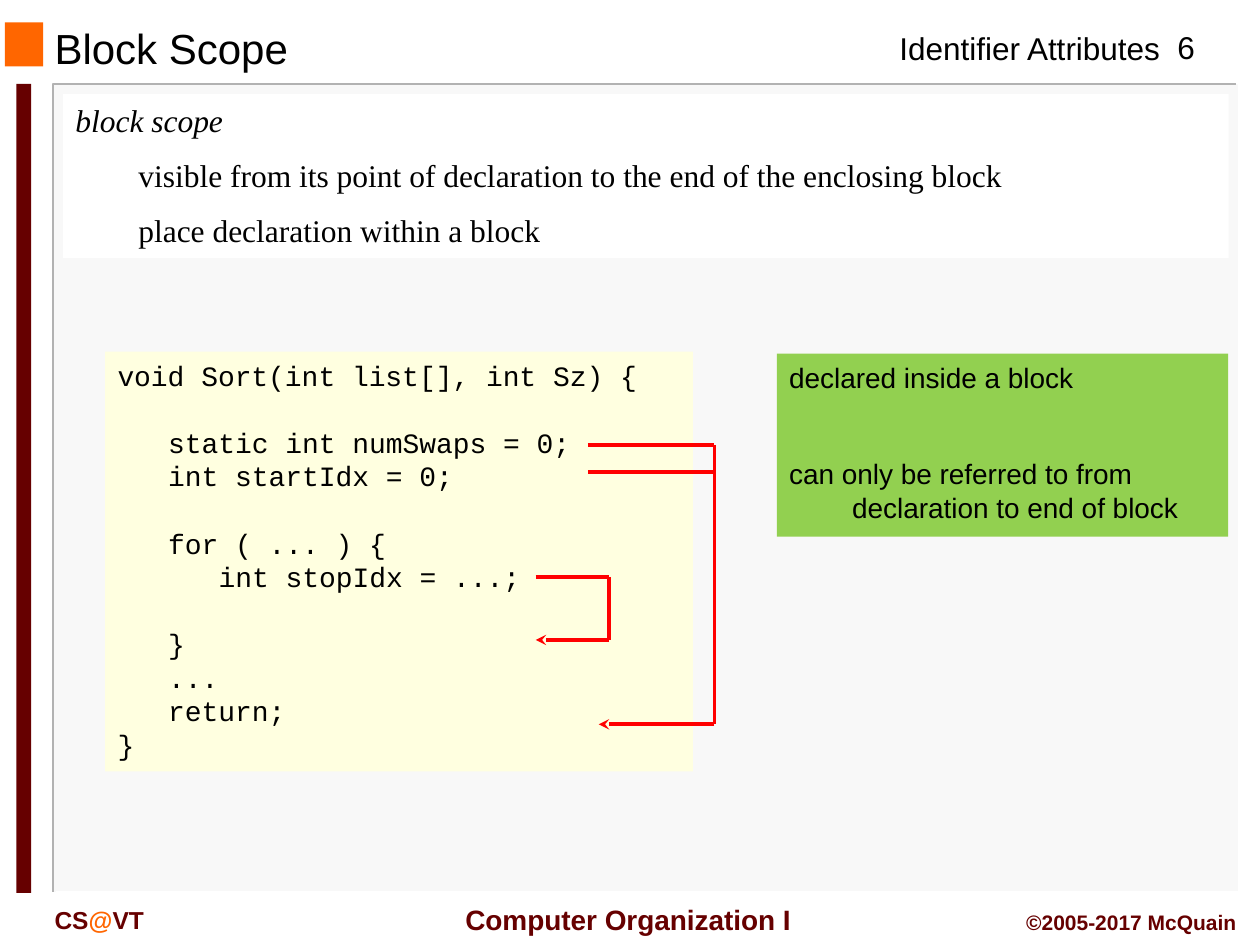
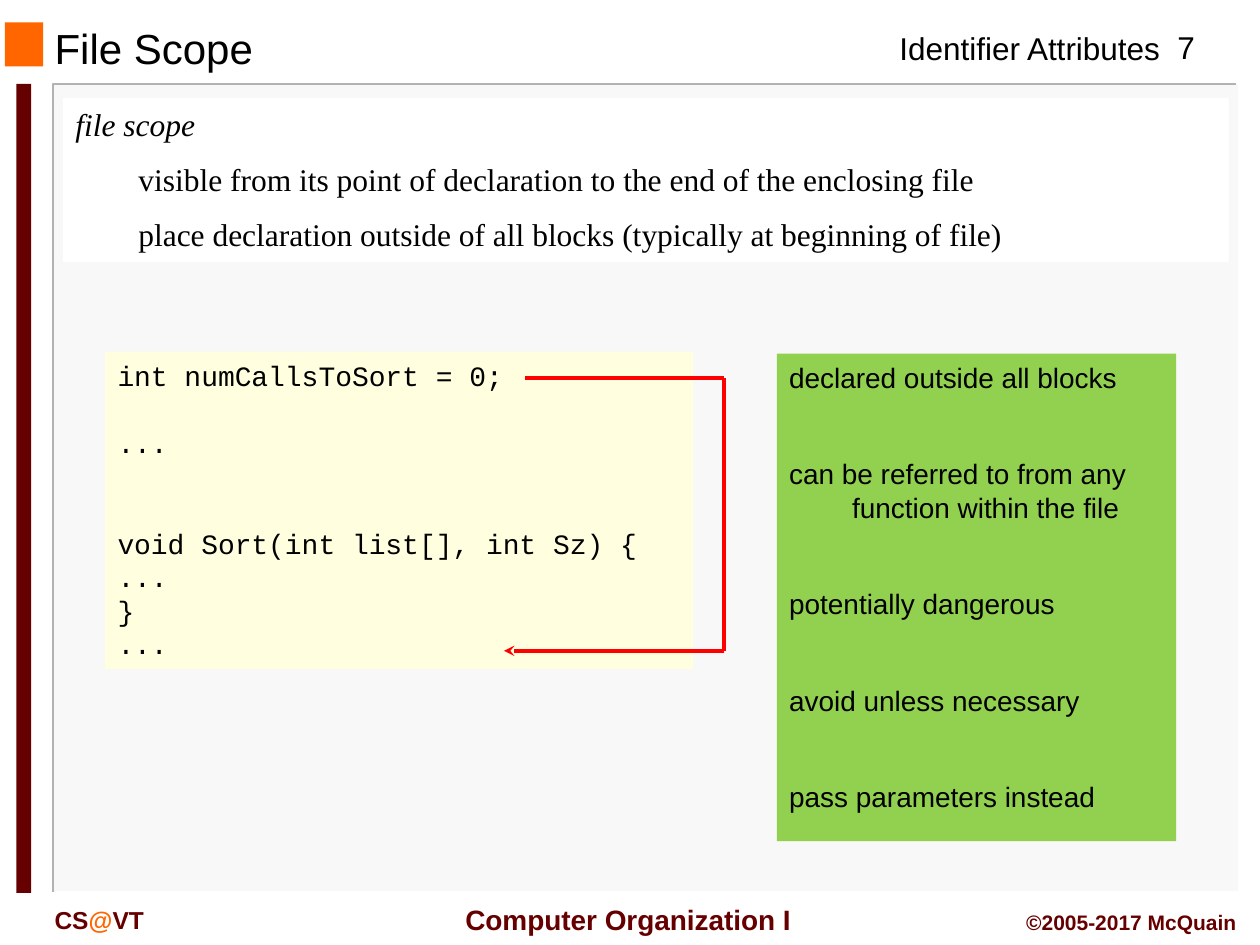
from lxml import etree
from pptx import Presentation
from pptx.dml.color import RGBColor
from pptx.enum import shapes, text
from pptx.oxml import ns
from pptx.util import Cm, Pt

BLACK = RGBColor(0x00, 0x00, 0x00)
WHITE = RGBColor(0xFF, 0xFF, 0xFF)
PANEL_GREY = RGBColor(0xF8, 0xF8, 0xF8)
EDGE_GREY = RGBColor(0xB2, 0xB2, 0xB2)
ORANGE = RGBColor(0xFF, 0x66, 0x00)
MAROON = RGBColor(0x66, 0x00, 0x00)
CODE_YELLOW = RGBColor(0xFF, 0xFF, 0xE0)
NOTE_GREEN = RGBColor(0x92, 0xD0, 0x50)
RED = RGBColor(0xFF, 0x00, 0x00)

SANS, SERIF, MONO = "Arial", "Times New Roman", "Courier New"
HANG = Cm(1.27)
CODE_STEP = Cm(1.02)   # three characters of code
CODE_LINE = 19.2       # line pitch of code in points
LEFT, CENTER, RIGHT = (text.PP_ALIGN.LEFT, text.PP_ALIGN.CENTER,
                       text.PP_ALIGN.RIGHT)


def add_run(p, words, font, size, color=BLACK, bold=False, italic=False):
    r = p.add_run()
    r.text = words
    r.font.name = font
    r.font.size = Pt(size)
    r.font.color.rgb = color
    r.font.bold = bold
    r.font.italic = italic


def set_indent(p, margin, first=0):
    pPr = p._p.get_or_add_pPr()
    pPr.set("marL", str(int(margin)))
    pPr.set("indent", str(int(first)))


def set_frame(tf, anchor=text.MSO_ANCHOR.TOP, wrap=True):
    tf.auto_size = text.MSO_AUTO_SIZE.NONE
    tf.word_wrap = wrap
    tf.vertical_anchor = anchor
    tf.margin_left = tf.margin_right = Cm(0.25)
    tf.margin_top = tf.margin_bottom = Cm(0.13)


def add_block(slide, box, color):
    sp = slide.shapes.add_shape(shapes.MSO_SHAPE.RECTANGLE, *map(Cm, box))
    sp.shadow.inherit = False
    sp.fill.solid()
    sp.fill.fore_color.rgb = color
    sp.line.fill.background()
    set_frame(sp.text_frame)
    return sp.text_frame


def add_paragraphs(tf, count):
    """Return count left-aligned paragraphs, the first one included."""
    for _ in range(count - 1):
        tf.add_paragraph()
    for p in tf.paragraphs:
        p.alignment = LEFT
    return tf.paragraphs


def add_label(slide, box, runs, size, align=LEFT, bold=False, wrap=True):
    tf = slide.shapes.add_textbox(*map(Cm, box)).text_frame
    set_frame(tf, wrap=wrap)
    p = tf.paragraphs[0]
    p.alignment = align
    for words, color in runs:
        add_run(p, words, SANS, size, color, bold)


def add_edge(slide, points, color):
    start, *rest = [(Cm(x), Cm(y)) for x, y in points]
    builder = slide.shapes.build_freeform(*start, scale=1.0)
    builder.add_line_segments(rest, close=False)
    sp = builder.convert_to_shape()
    sp.shadow.inherit = False
    sp.fill.background()
    sp.line.color.rgb = color
    sp.line.width = Pt(1)


def add_scope_line(slide, points, arrow=True):
    """Join the points with red lines; the last may end in an arrowhead."""
    for start, end in zip(points, points[1:]):
        line = slide.shapes.add_connector(
            shapes.MSO_CONNECTOR.STRAIGHT, *map(Cm, start + end))
        line.line.color.rgb = RED
        line.line.width = Pt(2)
        spPr = line._element.spPr
        if arrow and end == points[-1]:
            tail = etree.SubElement(spPr.find(ns.qn("a:ln")),
                                    ns.qn("a:tailEnd"))
            tail.set("type", "stealth")
        etree.SubElement(spPr, ns.qn("a:effectLst"))


def add_definition(slide, top, term, details):
    tf = add_block(slide, (1.27, top, 23.5, 3.3), WHITE)
    first, *rest = add_paragraphs(tf, 1 + len(details))
    add_run(first, term, SERIF, 18, italic=True)
    for p, words in zip(rest, details):
        set_indent(p, HANG)
        p.space_before = Pt(10)
        add_run(p, words, SERIF, 18)


def add_code(slide, height, lines):
    """Each line is (indent level, empty lines above, code)."""
    tf = add_block(slide, (2.12, 7.09, 11.85, height), CODE_YELLOW)
    for p, (level, gap, code) in zip(add_paragraphs(tf, len(lines)), lines):
        set_indent(p, level * CODE_STEP)
        p.line_spacing = Pt(CODE_LINE)
        p.space_before = Pt(gap * CODE_LINE)
        add_run(p, code, MONO, 16)


def add_notes_box(slide, width, height, notes):
    tf = add_block(slide, (15.66, 7.13, width, height), NOTE_GREEN)
    for i, p in enumerate(add_paragraphs(tf, len(notes))):
        set_indent(p, HANG, -HANG)
        p.space_before = Pt(36 if i else 0)
        add_run(p, notes[i], SANS, 16)


def add_scope_slide(prs, title, number):
    slide = prs.slides.add_slide(prs.slide_layouts[5])

    # Title
    sp = slide.shapes.title
    sp.left, sp.top, sp.width, sp.height = map(Cm, (0.85, 0.49, 16.09, 0.95))
    set_frame(sp.text_frame, text.MSO_ANCHOR.MIDDLE)
    p = sp.text_frame.paragraphs[0]
    p.alignment = LEFT
    add_run(p, title, SANS, 24)

    # Panel with its edges, orange square and maroon bar
    add_block(slide, (1.08, 1.7, 23.88, 16.28), PANEL_GREY)
    add_edge(slide, [(24.92, 1.7), (1.07, 1.7), (1.07, 17.98)], EDGE_GREY)
    add_edge(slide, [(24.97, 1.7), (24.97, 17.98), (1.12, 17.98)], WHITE)
    add_block(slide, (0.1, 0.45, 0.77, 0.89), ORANGE)
    add_block(slide, (0.33, 1.69, 0.3, 16.31), MAROON)

    # Header and footer
    add_label(slide, (17.88, 0.46, 5.82, 1.02),
              [("Identifier Attributes", BLACK)], 18, wrap=False)
    add_label(slide, (23.06, 0.43, 1.7, 1.02), [(str(number), BLACK)], 18,
              CENTER)
    add_label(slide, (8.97, 18.06, 7.39, 0.94),
              [("Computer Organization I", MAROON)], 16, CENTER, bold=True)
    add_label(slide, (0.85, 18.11, 3.81, 0.85),
              [("CS", MAROON), ("@", ORANGE), ("VT", MAROON)], 14, bold=True)
    add_label(slide, (19.9, 18.2, 5.28, 0.77),
              [("©2005-2017 McQuain", MAROON)], 12, RIGHT, bold=True)
    return slide


def build_block_scope(prs):
    slide = add_scope_slide(prs, "Block Scope", 6)
    add_definition(slide, 1.9, "block scope", [
        "visible from its point of declaration to the end of the enclosing block",
        "place declaration within a block"])
    add_code(slide, 8.46, [
        (0, 0, "void Sort(int list[], int Sz) {"),
        (1, 1, "static int numSwaps = 0;"),
        (1, 0, "int startIdx = 0;"),
        (1, 1, "for ( ... ) {"),
        (2, 0, "int stopIdx = ...;"),
        (1, 1, "}"),
        (1, 0, "..."),
        (1, 0, "return;"),
        (0, 0, "}")])
    add_notes_box(slide, 9.1, 3.69, [
        "declared inside a block",
        "can only be referred to from declaration to end of block"])

    # Function-level scope, then loop-level scope
    add_scope_line(slide, [(11.85, 8.97), (14.4, 8.97), (14.4, 14.6),
                           (12.07, 14.6)])
    add_scope_line(slide, [(11.85, 9.52), (14.4, 9.52)], arrow=False)
    add_scope_line(slide, [(10.8, 11.63), (12.28, 11.63), (12.28, 12.9),
                           (10.8, 12.9)])


def build_file_scope(prs):
    slide = add_scope_slide(prs, "File Scope", 7)
    add_code(slide, 6.4, [
        (0, 0, "int numCallsToSort = 0;"),
        (0, 1, "..."),
        (0, 2, "void Sort(int list[], int Sz) {"),
        (0, 0, "..."),
        (0, 0, "}"),
        (0, 0, "...")])
    add_notes_box(slide, 8.05, 9.83, [
        "declared outside all blocks",
        "can be referred to from any function within the file",
        "potentially dangerous",
        "avoid unless necessary",
        "pass parameters instead"])
    add_definition(slide, 1.98, "file scope", [
        "visible from its point of declaration to the end of the enclosing file",
        "place declaration outside of all blocks (typically at beginning of file)"])
    add_scope_line(slide, [(10.58, 7.62), (14.6, 7.62), (14.6, 13.12),
                           (10.16, 13.12)])


def main():
    prs = Presentation()
    prs.slide_width, prs.slide_height = Cm(25.4), Cm(19.05)
    build_block_scope(prs)
    build_file_scope(prs)
    prs.save("out.pptx")


if __name__ == "__main__":
    main()
